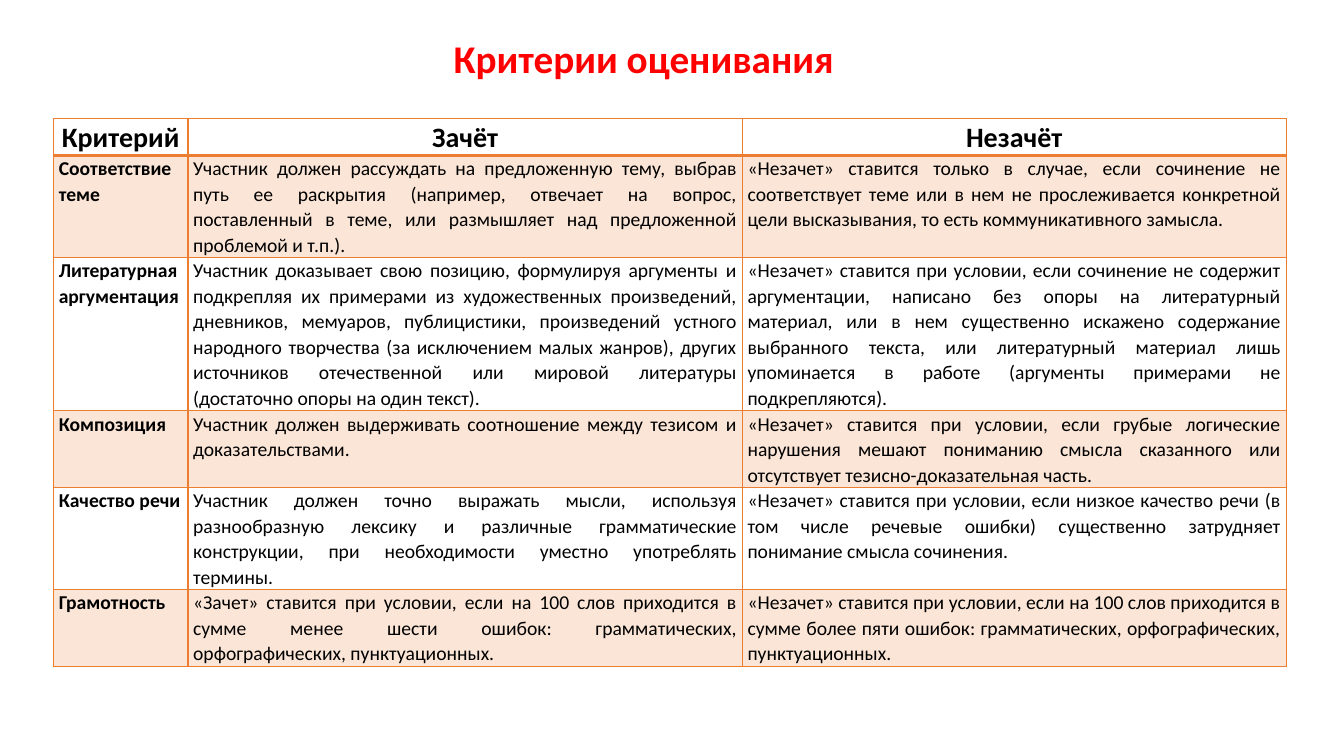
from lxml import etree
from pptx import Presentation
from pptx import util as u
from pptx.dml.color import RGBColor
from pptx.enum import text
from pptx.oxml.ns import qn

PX = 9525
FONT = "Calibri"
COLORS = {"title": "FF0000", "ink": "000000", "line": "ED7D31", "band": "FBE5D6"}
WIDTHS = [128, 528, 518]
HEIGHTS = [35, 97, 146, 73, 97, 73]
ROWS = [
    ("Критерий", "Зачёт", "Незачёт"),
    ("Соответствие теме",
     "Участник должен рассуждать на предложенную тему, выбрав путь ее раскрытия (например, отвечает на вопрос, поставленный в теме, или размышляет над предложенной проблемой и т.п.).",
     "«Незачет» ставится только в случае, если сочинение не соответствует теме или в нем не прослеживается конкретной цели высказывания, то есть коммуникативного замысла."),
    ("Литературная аргументация",
     "Участник доказывает свою позицию, формулируя аргументы и подкрепляя их примерами из художественных произведений, дневников, мемуаров, публицистики, произведений устного народного творчества (за исключением малых жанров), других источников отечественной или мировой литературы (достаточно опоры на один текст).",
     "«Незачет» ставится при условии, если сочинение не содержит аргументации, написано без опоры на литературный материал, или в нем существенно искажено содержание выбранного текста, или литературный материал лишь упоминается в работе (аргументы примерами не подкрепляются)."),
    ("Композиция",
     "Участник должен выдерживать соотношение между тезисом и доказательствами.",
     "«Незачет» ставится при условии, если грубые логические нарушения мешают пониманию смысла сказанного или отсутствует тезисно-доказательная часть."),
    ("Качество речи",
     "Участник должен точно выражать мысли, используя разнообразную лексику и различные грамматические конструкции, при необходимости уместно употреблять термины.",
     "«Незачет» ставится при условии, если низкое качество речи (в том числе речевые ошибки) существенно затрудняет понимание смысла сочинения."),
    ("Грамотность",
     "«Зачет» ставится при условии, если на 100 слов приходится в сумме менее шести ошибок: грамматических, орфографических, пунктуационных.",
     "«Незачет» ставится при условии, если на 100 слов приходится в сумме более пяти ошибок: грамматических, орфографических, пунктуационных."),
]


def style(para, size, color, bold, align):
    para.alignment = align
    font = para.font
    font.name, font.size, font.bold = FONT, u.Pt(size), bold
    font.color.rgb = RGBColor.from_string(COLORS[color])


def border(cell, side, width):
    props = cell._tc.get_or_add_tcPr()
    line = etree.Element(qn("a:ln" + side), w=str(u.Pt(width)))
    fill = etree.SubElement(line, qn("a:solidFill"))
    etree.SubElement(fill, qn("a:srgbClr"), val=COLORS["line"])
    props.insert("LRTB".index(side), line)


deck = Presentation()
deck.slide_width, deck.slide_height = 1280 * PX, 720 * PX
slide = deck.slides.add_slide(deck.slide_layouts[5])

title = slide.shapes.title
title.left, title.top, title.width, title.height = [n * PX for n in (77, 28, 1072, 55)]
frame = title.text_frame
frame.text = "Критерии оценивания"
frame.auto_size = text.MSO_AUTO_SIZE.NONE
frame.vertical_anchor = text.MSO_ANCHOR.MIDDLE
style(frame.paragraphs[0], 28, "title", True, text.PP_ALIGN.CENTER)

table = slide.shapes.add_table(
    len(ROWS), len(WIDTHS), 51 * PX, 113 * PX, sum(WIDTHS) * PX, sum(HEIGHTS) * PX
).table
table.first_row = table.horz_banding = False
for col, width in zip(table.columns, WIDTHS):
    col.width = width * PX

for r, (row, height) in enumerate(zip(ROWS, HEIGHTS)):
    table.rows[r].height = height * PX
    for c, words in enumerate(row):
        cell = table.cell(r, c)
        cell.text = words
        cell.margin_left = cell.margin_right = 5 * PX
        cell.margin_top = cell.margin_bottom = 0
        if r % 2:
            cell.fill.solid()
            cell.fill.fore_color.rgb = RGBColor.from_string(COLORS["band"])
        else:
            cell.fill.background()
        for side in "LRTB":
            thick = (r, side) in ((0, "B"), (1, "T"))
            border(cell, side, 2 if thick else 1)
        if r == 0:
            align = text.PP_ALIGN.CENTER
        else:
            align = text.PP_ALIGN.JUSTIFY if c else text.PP_ALIGN.LEFT
        para = cell.text_frame.paragraphs[0]
        para.line_spacing = 1.07
        style(para, 14 if r else 20, "ink", r == 0 or c == 0, align)

deck.save("out.pptx")
